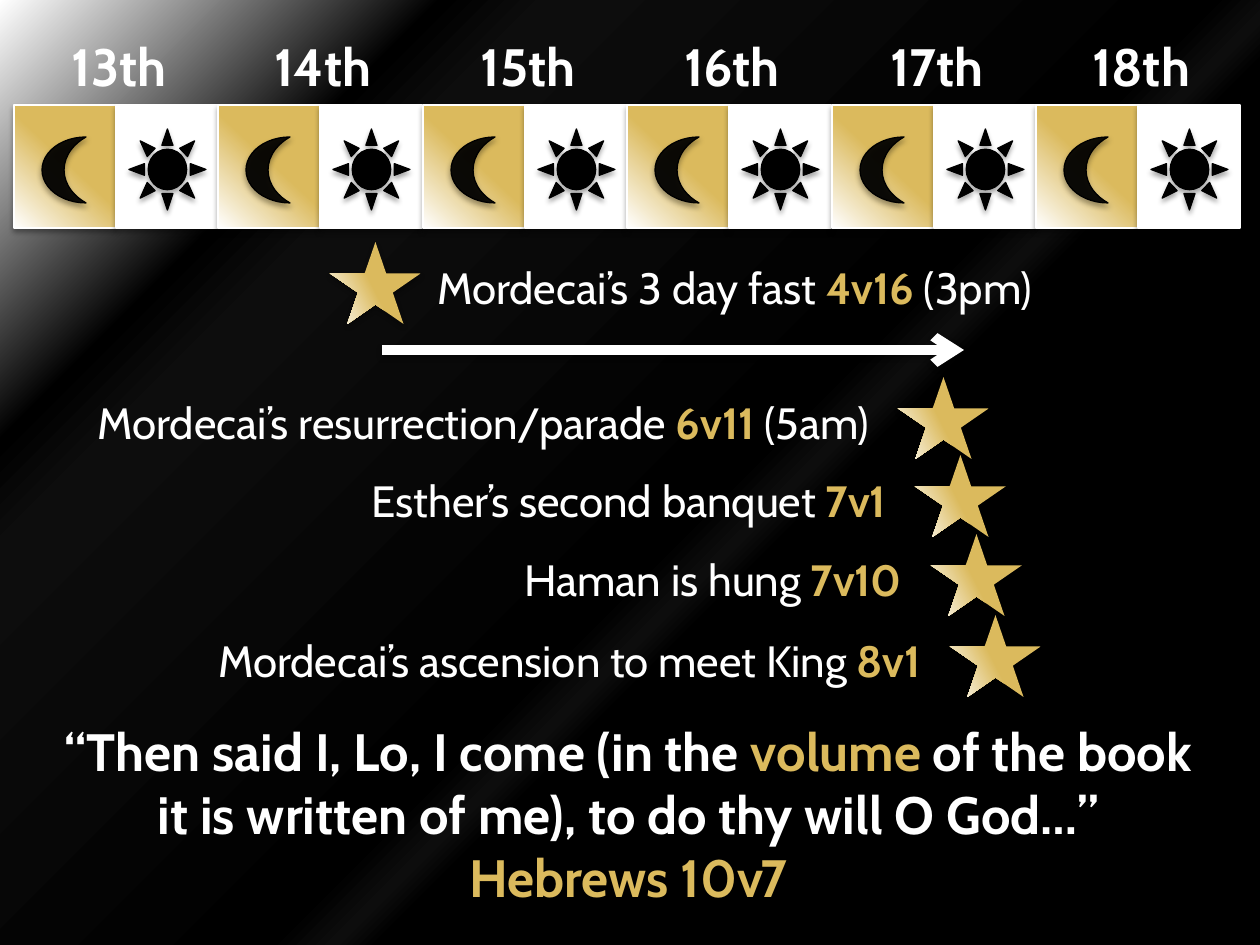
from lxml.etree import SubElement
from pptx import Presentation
from pptx.dml.color import RGBColor
from pptx.enum.shapes import MSO_CONNECTOR, MSO_SHAPE as SHAPE
from pptx.enum.text import MSO_AUTO_SIZE, PP_ALIGN as ALIGN
from pptx.oxml.ns import qn
from pptx.util import Emu, Pt

COLORS = {"white": "FFFFFF", "black": "000000", "gold": "DBBA5D", "gray": "0D0D0D"}
SCALE = 914400 / 126
BACKDROP = [(21, "black"), (40, "black"), (42, "gray"), (45, "black"),
            (75, "gray"), (80, "black"), (100, "white")]
CELL_GRADIENT = ([(47, "gold"), (100, "white")], 133)
STAR_GRADIENT = ([(53, "gold"), (100, "white")], 153)

DAYS = ["13th", "14th", "15th", "16th", "17th", "18th"]
DAY_LEFT, DAY_STEP = 14, 204.4
FAST = [("Mordecai’s 3 day fast ", "white", False), ("4v16 ", "gold", True),
        ("(3pm)", "white", False)]
# star left, star top, caption width, plain text, verse, time
EVENTS = [
    (898, 377, 975, "Mordecai’s resurrection/parade ", "6v11 ", "(5am) "),
    (915, 455, 877, "Esther’s second banquet ", "7v1 ", ""),
    (931, 534, 877, "Haman is hung ", "7v10 ", ""),
    (950, 615, 944, "Mordecai’s ascension to meet King ", "8v1 ", ""),
]
QUOTE = [("“Then said I, Lo, I come (in the ", "white", True), ("volume", "gold", True),
         (" of the book it is written of me), to do thy will O God…” ", "white", True),
         ("Hebrews 10v7", "gold", True)]


def px(*values):
    return [Emu(round(v * SCALE)) for v in values]


def rgb(name):
    return RGBColor.from_string(COLORS[name])


def add(parent, tag, **attrs):
    return SubElement(parent, qn(tag), {k: str(v) for k, v in attrs.items()})


class Deck:
    font = "Cabin"

    def __init__(self, width, height):
        self.prs = Presentation()
        self.prs.slide_width, self.prs.slide_height = px(width, height)
        self.s = self.prs.slides.add_slide(self.prs.slide_layouts[6])

    def gradient(self, fill, element, stops):
        """Turn fill into a gradient with these stops; its direction is left to the caller."""
        fill.gradient()
        grad = next(element.iter(qn("a:gradFill")))
        grad.clear()
        grad.set("rotWithShape", "1")
        stop_list = add(grad, "a:gsLst")
        for pos, color in stops:
            add(add(stop_list, "a:gs", pos=pos * 1000), "a:srgbClr", val=COLORS[color])
        return grad

    def backdrop(self, stops):
        grad = self.gradient(self.s.background.fill, self.s.element, stops)
        add(add(grad, "a:path", path="circle"), "a:fillToRect", l=100000, t=100000)

    def shadow(self, sp, alpha=35, dist=1.8):
        sp_pr = sp._element.spPr
        effects = sp_pr.find(qn("a:effectLst"))
        if effects is None:
            effects = add(sp_pr, "a:effectLst")
        outer = add(effects, "a:outerShdw", blurRad=Pt(3.1), dist=Pt(dist),
                    dir=90 * 60000, rotWithShape=0)
        add(add(outer, "a:srgbClr", val=COLORS["black"]), "a:alpha", val=alpha * 1000)

    def shape(self, parent, kind, box, fill, line=None, alpha=None):
        """Fill is a colour name, or a pair of gradient stops and angle."""
        sp = parent.shapes.add_shape(kind, *px(*box))
        sp.shadow.inherit = False
        if isinstance(fill, str):
            sp.fill.solid()
            sp.fill.fore_color.rgb = rgb(fill)
            if alpha:
                color = next(sp._element.spPr.iter(qn("a:srgbClr")))
                add(color, "a:alpha", val=alpha * 1000)
        else:
            stops, angle = fill
            grad = self.gradient(sp.fill, sp._element.spPr, stops)
            add(grad, "a:lin", ang=angle * 60000, scaled=0)
        if line:
            sp.line.color.rgb = rgb(line)
            sp.line.width = Pt(0.75)
        else:
            sp.line.fill.background()
        self.shadow(sp)

    def text(self, parent, box, runs, size, align):
        tf = parent.shapes.add_textbox(*px(*box)).text_frame
        tf.word_wrap = True
        tf.auto_size = MSO_AUTO_SIZE.SHAPE_TO_FIT_TEXT
        p = tf.paragraphs[0]
        p.alignment = align
        for words, color, bold in runs:
            r = p.add_run()
            r.text = words
            r.font.name, r.font.size, r.font.bold = self.font, Pt(size), bold
            r.font.color.rgb = rgb(color)

    def arrow(self, x1, x2, y):
        line = self.s.shapes.add_connector(MSO_CONNECTOR.STRAIGHT, *px(x1, y, x2, y))
        line.line.color.rgb = rgb("white")
        line.line.width = Pt(5.5)
        add(line.line._get_or_add_ln(), "a:tailEnd", type="arrow")
        self.shadow(line, alpha=38, dist=1.6)

    def day(self, group, x):
        """A night cell and a daylight cell side by side."""
        self.shape(group, SHAPE.RECTANGLE, (x, 105, 102, 123), CELL_GRADIENT, "white")
        self.shape(group, SHAPE.RECTANGLE, (x + 102, 105, 102, 123), "white", "white")
        self.shape(group, SHAPE.MOON, (x + 28, 137, 44, 66), "black", "black", alpha=93)
        self.shape(group, SHAPE.SUN, (x + 115, 129, 77, 81), "black", "black")

    def event(self, x, y, text_left, text_width, runs, align):
        group = self.s.shapes.add_group_shape()
        self.shape(group, SHAPE.STAR_5_POINT, (x, y, 91, 82), STAR_GRADIENT)
        self.text(group, (text_left, y + 13, text_width, 66), runs, 25, align)


def main():
    deck = Deck(1260, 945)
    deck.backdrop(BACKDROP)
    lefts = [round(DAY_LEFT + i * DAY_STEP) for i in range(len(DAYS))]
    for x, name in zip(lefts, DAYS):
        deck.text(deck.s, (x + 27, 28, 156, 77), [(name, "white", True)], 30, ALIGN.CENTER)
    deck.arrow(382, 964, 350)
    calendar = deck.s.shapes.add_group_shape()
    for x in lefts:
        deck.day(calendar, x)

    deck.event(330, 242, 425, 685, FAST, ALIGN.LEFT)
    for x, y, width, words, verse, time in EVENTS:
        runs = [(words, "white", False), (verse, "gold", True)]
        if time:
            runs.append((time, "white", False))
        deck.event(x, y, x - 7 - width, width, runs, ALIGN.RIGHT)
    deck.text(deck.s, (44, 713, 1169, 210), QUOTE, 30, ALIGN.CENTER)
    deck.prs.save("out.pptx")


if __name__ == "__main__":
    main()
